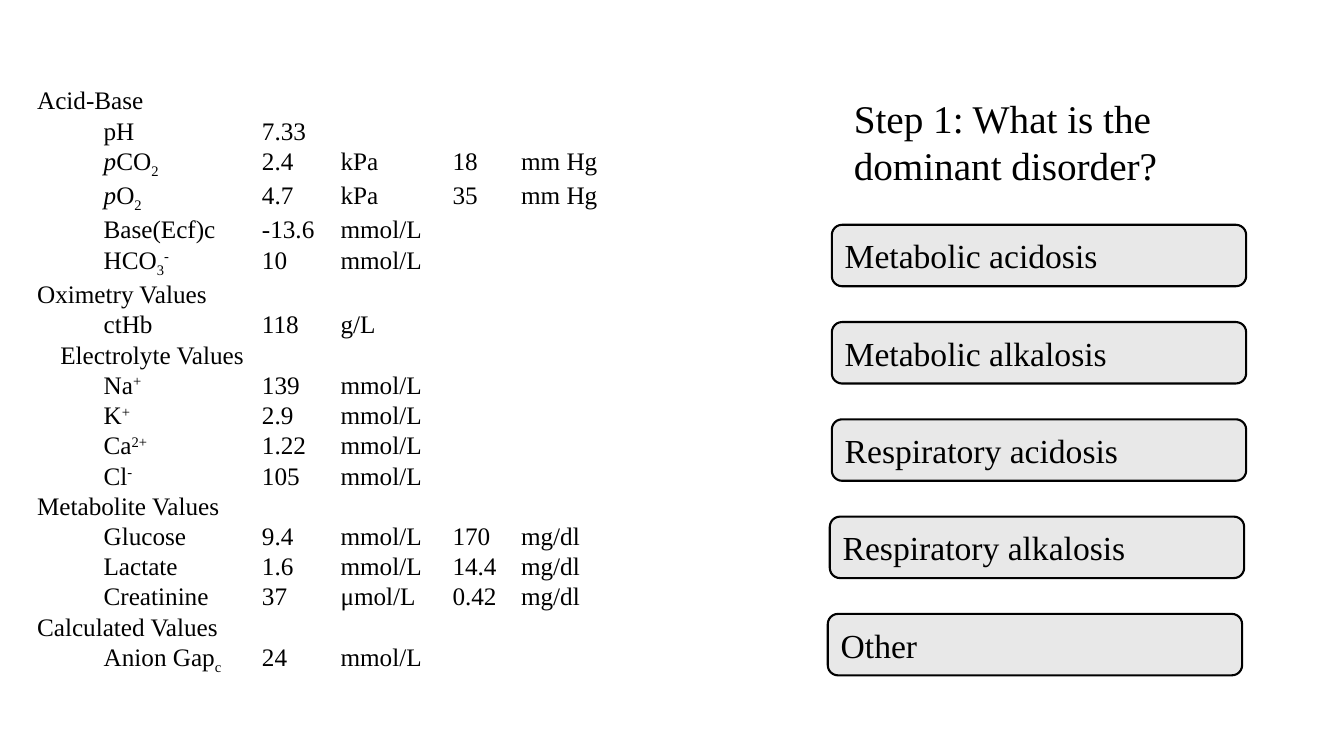
from dataclasses import dataclass

import pptx
import pptx.dml.color
import pptx.enum.shapes
import pptx.enum.text
import pptx.oxml
import pptx.oxml.ns
import pptx.util
from pptx.util import Inches


@dataclass(frozen=True)
class Theme:
    font: str = "Times New Roman"
    ink: str = "000000"
    panel: str = "E8E8E8"
    title_size: int = 28
    option_size: int = 24
    lab_size: int = 18
    outline: float = 1.5


THEME = Theme()

TAB_STOPS = (0.23, 0.66, 2.23, 3.01, 4.12, 4.8)

# A label piece after "|" may start with * (italic), _ (subscript) or ^ (superscript)
PIECE_STYLES = {"*": {"i": "1"}, "_": {"baseline": "-25000"}, "^": {"baseline": "30000"}}

# Each row: tab level, label, then values and units
LAB_ROWS = [
    (0, "Acid-Base"),
    (2, "pH", "7.33"),
    (2, "*p|CO|_2", "2.4", "kPa", "18", "mm Hg"),
    (2, "*p|O|_2", "4.7", "kPa", "35", "mm Hg"),
    (2, "Base(Ecf)c", "-13.6", "mmol/L"),
    (2, "HCO|_3|^-", "10", "mmol/L"),
    (0, "Oximetry Values"),
    (2, "ctHb", "118", "g/L"),
    (1, "Electrolyte Values"),
    (2, "Na|^+", "139", "mmol/L"),
    (2, "K|^+", "2.9", "mmol/L"),
    (2, "Ca|^2+", "1.22", "mmol/L"),
    (2, "Cl|^-", "105", "mmol/L"),
    (0, "Metabolite Values"),
    (2, "Glucose", "9.4", "mmol/L", "170", "mg/dl"),
    (2, "Lactate", "1.6", "mmol/L", "14.4", "mg/dl"),
    (2, "Creatinine", "37", "μmol/L", "0.42", "mg/dl"),
    (0, "Calculated Values"),
    (2, "Anion Gap|_c", "24", "mmol/L"),
]

# Answer options with their left edges
OPTIONS = [
    ("Metabolic acidosis", 8.25),
    ("Metabolic alkalosis", 8.25),
    ("Respiratory acidosis", 8.25),
    ("Respiratory alkalosis", 8.23),
    ("Other", 8.21),
]
OPTION_TOP, OPTION_STEP = 2.23, 0.965


def color(value):
    return pptx.dml.color.RGBColor.from_string(value)


def style_paragraph(paragraph, size):
    paragraph.alignment = pptx.enum.text.PP_ALIGN.LEFT
    paragraph.font.name = THEME.font
    paragraph.font.size = pptx.util.Pt(size)
    paragraph.font.color.rgb = color(THEME.ink)


def add_text_box(slide, left, top, width, height):
    box = slide.shapes.add_textbox(Inches(left), Inches(top), Inches(width), Inches(height))
    box.text_frame.word_wrap = True
    box.text_frame.auto_size = pptx.enum.text.MSO_AUTO_SIZE.SHAPE_TO_FIT_TEXT
    return box.text_frame


def add_tab_stops(paragraph):
    properties = paragraph._p.get_or_add_pPr()
    tab_list = pptx.oxml.parse_xml(f"<a:tabLst {pptx.oxml.ns.nsdecls('a')}/>")
    for stop in TAB_STOPS:
        tab = tab_list.makeelement(pptx.oxml.ns.qn("a:tab"), {"pos": str(Inches(stop)), "algn": "l"})
        tab_list.append(tab)
    properties.append(tab_list)


def add_run(paragraph, text, attributes):
    run = paragraph.add_run()
    run.text = text
    for name, value in attributes.items():
        run._r.get_or_add_rPr().set(name, value)


def fill_lab_row(paragraph, level, label, *values):
    add_tab_stops(paragraph)
    style_paragraph(paragraph, THEME.lab_size)
    if level:
        add_run(paragraph, "\t" * level, {})
    for piece in label.split("|"):
        attributes = PIECE_STYLES.get(piece[0], {})
        add_run(paragraph, piece[1:] if attributes else piece, attributes)
    if values:
        add_run(paragraph, "\t" + "\t".join(values), {})


def add_lab_results(slide):
    frame = add_text_box(slide, 0.27, 0.79, 6.23, 5.86)
    for index, row in enumerate(LAB_ROWS):
        paragraph = frame.add_paragraph() if index else frame.paragraphs[0]
        fill_lab_row(paragraph, *row)


def add_question(slide):
    paragraph = add_text_box(slide, 8.37, 0.89, 4.23, 1.04).paragraphs[0]
    paragraph.text = "Step 1: What is the dominant disorder?"
    style_paragraph(paragraph, THEME.title_size)


def add_option(slide, text, left, top):
    shape = slide.shapes.add_shape(
        pptx.enum.shapes.MSO_SHAPE.ROUNDED_RECTANGLE,
        Inches(left), Inches(top), Inches(4.11), Inches(0.61))
    shape.shadow.inherit = False
    shape.fill.solid()
    shape.fill.fore_color.rgb = color(THEME.panel)
    shape.line.color.rgb = color(THEME.ink)
    shape.line.width = pptx.util.Pt(THEME.outline)
    shape.text_frame.vertical_anchor = pptx.enum.text.MSO_ANCHOR.MIDDLE
    paragraph = shape.text_frame.paragraphs[0]
    paragraph.text = text
    style_paragraph(paragraph, THEME.option_size)


def main():
    presentation = pptx.Presentation()
    presentation.slide_width = Inches(13.33)
    presentation.slide_height = Inches(7.5)
    slide = presentation.slides.add_slide(presentation.slide_layouts[6])

    # Question and answer options
    add_question(slide)
    for index, (text, left) in enumerate(OPTIONS):
        add_option(slide, text, left, OPTION_TOP + index * OPTION_STEP)

    # Laboratory values in tabbed columns
    add_lab_results(slide)

    presentation.save("out.pptx")


if __name__ == "__main__":
    main()
